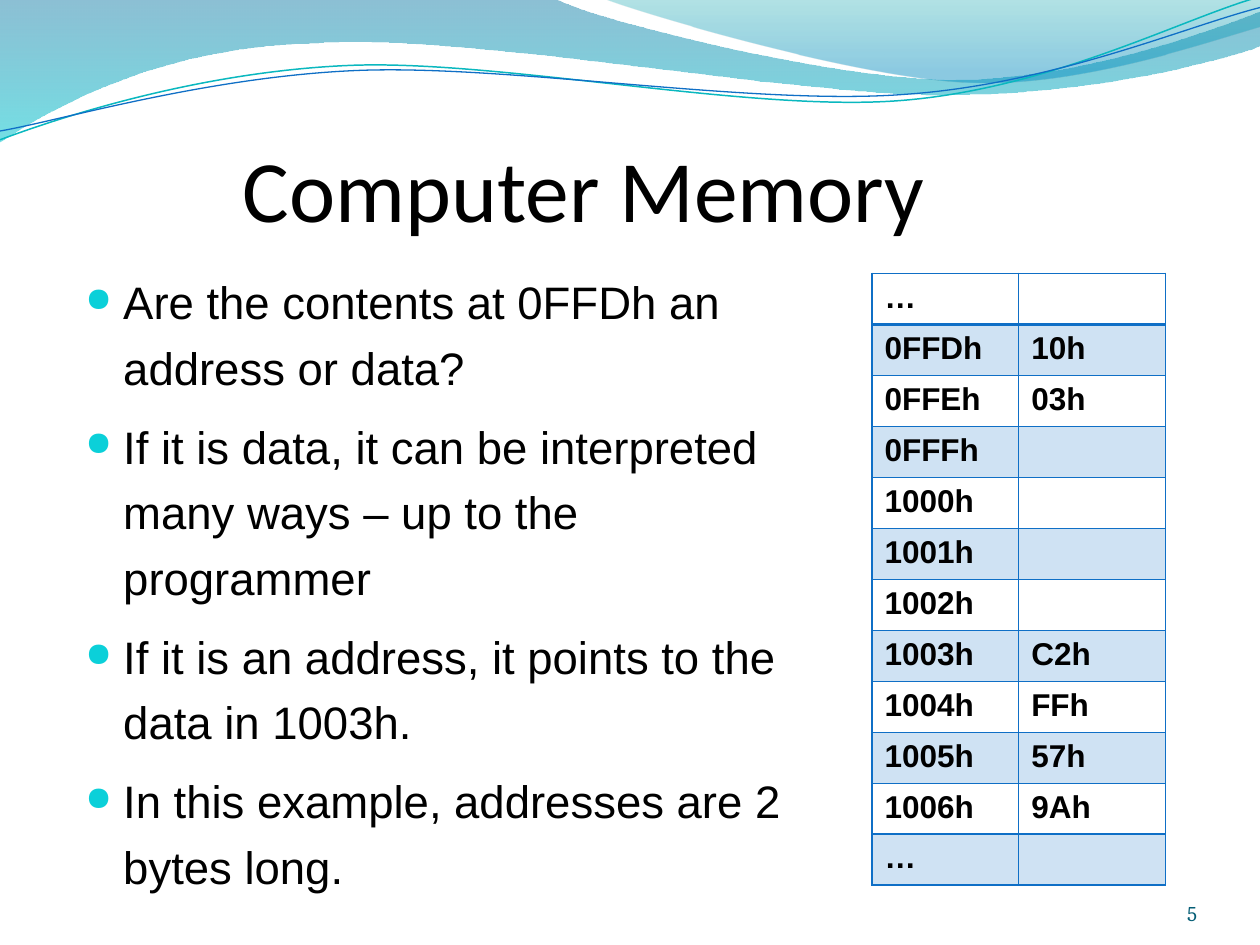
from dataclasses import dataclass

from lxml import etree
from pptx import Presentation
from pptx.dml.color import RGBColor
from pptx.enum.text import MSO_ANCHOR, PP_ALIGN
from pptx.oxml.ns import qn
from pptx.util import Inches, Pt

RIGHT, LEFT = PP_ALIGN.RIGHT, PP_ALIGN.LEFT
TOP, BOTTOM = MSO_ANCHOR.TOP, MSO_ANCHOR.BOTTOM
BLUE, BLACK = "0F6FC6", "000000"


@dataclass
class Stop:
    position: float
    color: str
    alpha: int


@dataclass
class Wave:
    """Each segment is one end point (straight) or three points (cubic curve)."""
    start: tuple
    segments: list
    stops: tuple = ()
    line: str = ""
    width: float = 0


WAVES = [
    Wave((0, 0), [
        [(4.4, -0.01)],
        [(4.76, 0.17), (6.64, 0.63), (7.58, 0.63)],
        [(8.53, 0.63), (9.58, 0.26), (10, 0.09)],
        [(10.01, 0.36)],
        [(9.83, 0.44), (8.7, 0.76), (7.46, 0.75)],
        [(6.22, 0.75), (3.82, 0.28), (2.57, 0.34)],
        [(1.29, 0.36), (0.46, 0.83), (-0.01, 1.13)],
        [(0, 0)],
    ], stops=(Stop(0, "0074A1", 45), Stop(1, "00C6CF", 55))),
    Wave((4.79, -0.01), [
        [(5.09, 0.11), (6.82, 0.62), (7.69, 0.65)],
        [(8.56, 0.69), (9.61, 0.32), (10, 0.21)],
        [(10, 0)],
        [(4.79, -0.01)],
    ], stops=(Stop(0, "00A1A9", 30), Stop(0.8, "008BBF", 45))),
    Wave((0, 1.11), [
        [(0.48, 0.93), (1.58, 0.57), (2.77, 0.52)],
        [(3.95, 0.47), (5.93, 0.89), (7.13, 0.8)],
        [(8.33, 0.71), (9.38, 0.15), (9.98, -0.02)],
    ], line="0AB8BF", width=0.85),
    Wave((0, 1.04), [
        [(0.47, 0.96), (1.64, 0.61), (2.83, 0.56)],
        [(4.03, 0.51), (5.97, 0.84), (7.17, 0.75)],
        [(8.36, 0.67), (9.41, 0.21), (10, 0.06)],
    ], line=BLUE, width=0.75),
]

BULLETS = [
    "Are the contents at 0FFDh an address or data?",
    "If it is data, it can be interpreted many ways – up to the programmer",
    "If it is an address, it points to the data in 1003h.",
    "In this example, addresses are 2 bytes long.",
]

MEMORY = [
    ("…", ""), ("0FFDh", "10h"), ("0FFEh", "03h"), ("0FFFh", ""),
    ("1000h", ""), ("1001h", ""), ("1002h", ""), ("1003h", "C2h"),
    ("1004h", "FFh"), ("1005h", "57h"), ("1006h", "9Ah"), ("…", ""),
]


def rgb(color: str) -> RGBColor:
    return RGBColor.from_string(color)


def add_xml(parent, tag: str, **attrs):
    return etree.SubElement(parent, qn(tag), attrs)


def set_alpha(parent, percent: int) -> None:
    add_xml(parent.find(".//" + qn("a:srgbClr")), "a:alpha", val=str(percent * 1000))


def set_font(p, name: str, size: float, color: str = BLACK, bold: bool = False) -> None:
    p.font.name, p.font.size, p.font.bold = name, Pt(size), bold
    p.font.color.rgb = rgb(color)


def bend(sp, segments: list) -> None:
    """Join each run of three straight steps that belongs to a curve into one cubic."""
    steps = iter(list(sp._element.iter(qn("a:lnTo"))))
    for segment in segments:
        first, *others = [next(steps) for _ in segment]
        if others:
            first.tag = qn("a:cubicBezTo")
            for step in others:
                first.append(step[0])
                step.getparent().remove(step)


def add_wave(s, wave: Wave) -> None:
    x, y = wave.start
    builder = s.shapes.build_freeform(Inches(x), Inches(y))
    builder.add_line_segments(
        [(Inches(px), Inches(py)) for segment in wave.segments for px, py in segment],
        close=bool(wave.stops))
    sp = builder.convert_to_shape()
    bend(sp, wave.segments)
    sp.shadow.inherit = False
    if wave.stops:
        sp.line.fill.background()
        sp.fill.gradient()
        sp.fill.gradient_angle = 270
        for target, stop in zip(sp.fill.gradient_stops, wave.stops):
            target.position = stop.position
            target.color.rgb = rgb(stop.color)
        for gs, stop in zip(sp._element.iter(qn("a:gs")), wave.stops):
            set_alpha(gs, stop.alpha)
    else:
        sp.fill.background()
        sp.line.color.rgb = rgb(wave.line)
        sp.line.width = Pt(wave.width)


def add_text(s, left: float, top: float, width: float, height: float,
             lines: list, anchor=TOP):
    sp = s.shapes.add_textbox(Inches(left), Inches(top), Inches(width), Inches(height))
    tf = sp.text_frame
    tf.word_wrap = True
    tf.vertical_anchor = anchor
    tf.text = "\n".join(lines)
    return tf


def set_bullet(p) -> None:
    pPr = p._p.get_or_add_pPr()
    pPr.set("marL", str(Inches(0.3)))
    pPr.set("indent", str(-Inches(0.3)))
    add_xml(add_xml(pPr, "a:buClr"), "a:srgbClr", val="0BD0D9")
    add_xml(pPr, "a:buSzPct", val="74000")
    add_xml(pPr, "a:buChar", char="●")


def set_borders(cell, bottom: float, top: float) -> None:
    tcPr = cell._tc.get_or_add_tcPr()
    for side, width in (("L", 1), ("R", 1), ("T", top), ("B", bottom)):
        ln = add_xml(tcPr, f"a:ln{side}", w=str(Pt(width)))
        add_xml(add_xml(ln, "a:solidFill"), "a:srgbClr", val=BLUE)


def add_memory_table(s) -> None:
    table = s.shapes.add_table(len(MEMORY), 2, Inches(6.92), Inches(2.17),
                               Inches(2.33), Inches(4.86)).table
    table.first_row = table.horz_banding = False
    table.rows[10].height = 0  # grows to fit its text
    for i, values in enumerate(MEMORY):
        for j, value in enumerate(values):
            cell = table.cell(i, j)
            set_borders(cell, bottom=2 if i == 0 else 1, top=2 if i == 1 else 1)
            if i % 2:
                cell.fill.solid()
                cell.fill.fore_color.rgb = rgb(BLUE)
                set_alpha(cell._tc.tcPr.find(qn("a:solidFill")), 20)
            else:
                cell.fill.background()
            cell.text = value
            set_font(cell.text_frame.paragraphs[0], "Arial", 18, bold=True)


def main() -> None:
    prs = Presentation()
    prs.slide_width, prs.slide_height = Inches(10), Inches(7.5)
    s = prs.slides.add_slide(prs.slide_layouts[6])
    for wave in WAVES:
        add_wave(s, wave)

    title = add_text(s, 1.83, 1.02, 6.25, 0.6, ["Computer Memory"])
    set_font(title.paragraphs[0], "Calibri", 50)

    for p in add_text(s, 0.58, 2.04, 5.83, 4.33, BULLETS).paragraphs:
        p.alignment = LEFT
        set_bullet(p)
        p.line_spacing = 1.2
        p.space_before = Pt(7.8)
        set_font(p, "Arial", 26)

    number = add_text(s, 8.67, 6.95, 0.83, 0.4, ["5"], BOTTOM)
    number.margin_left = number.margin_right = number.margin_top = number.margin_bottom = 0
    number.paragraphs[0].alignment = RIGHT
    set_font(number.paragraphs[0], "Cambria", 12, "045D75")

    add_memory_table(s)
    prs.save("out.pptx")


if __name__ == "__main__":
    main()
